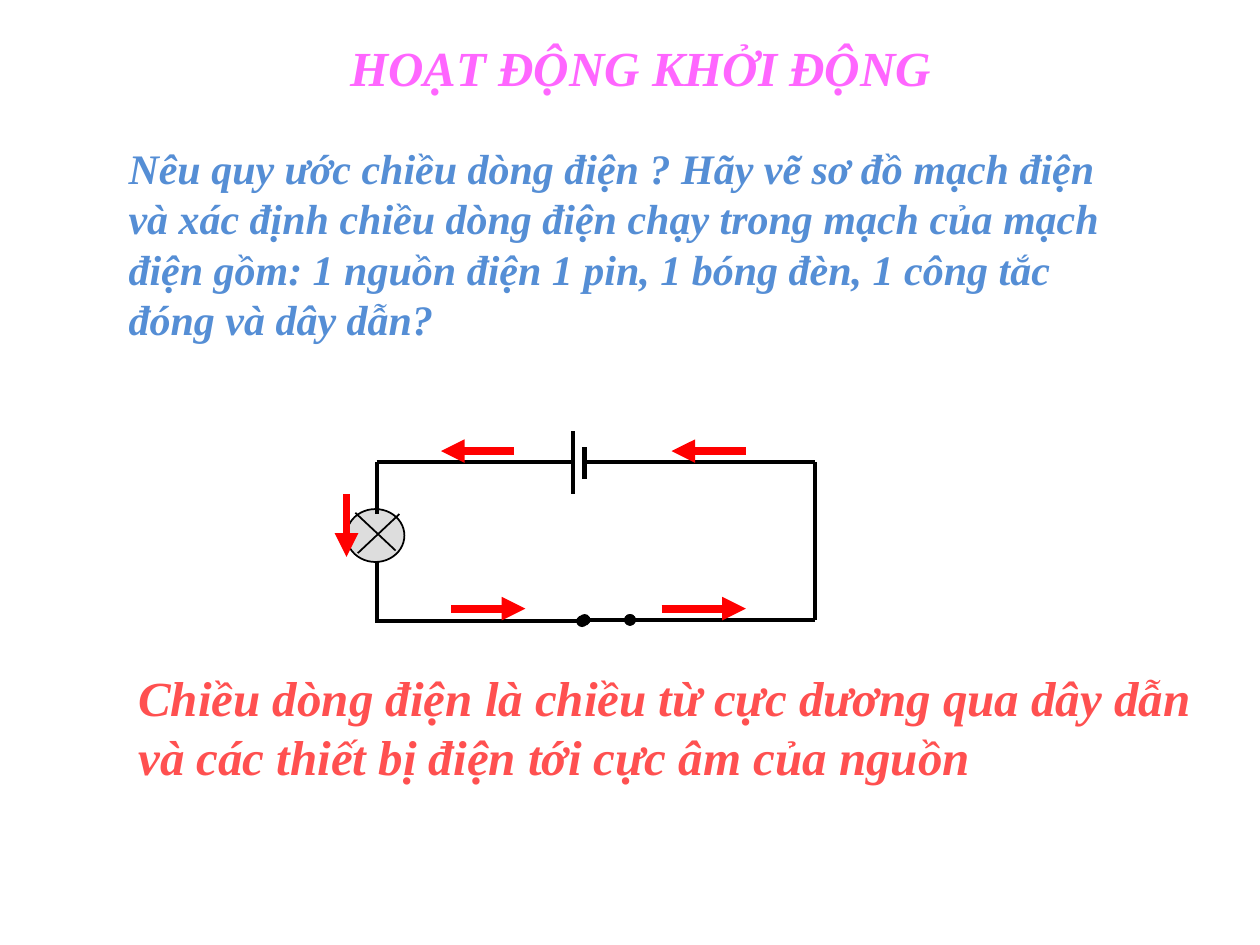
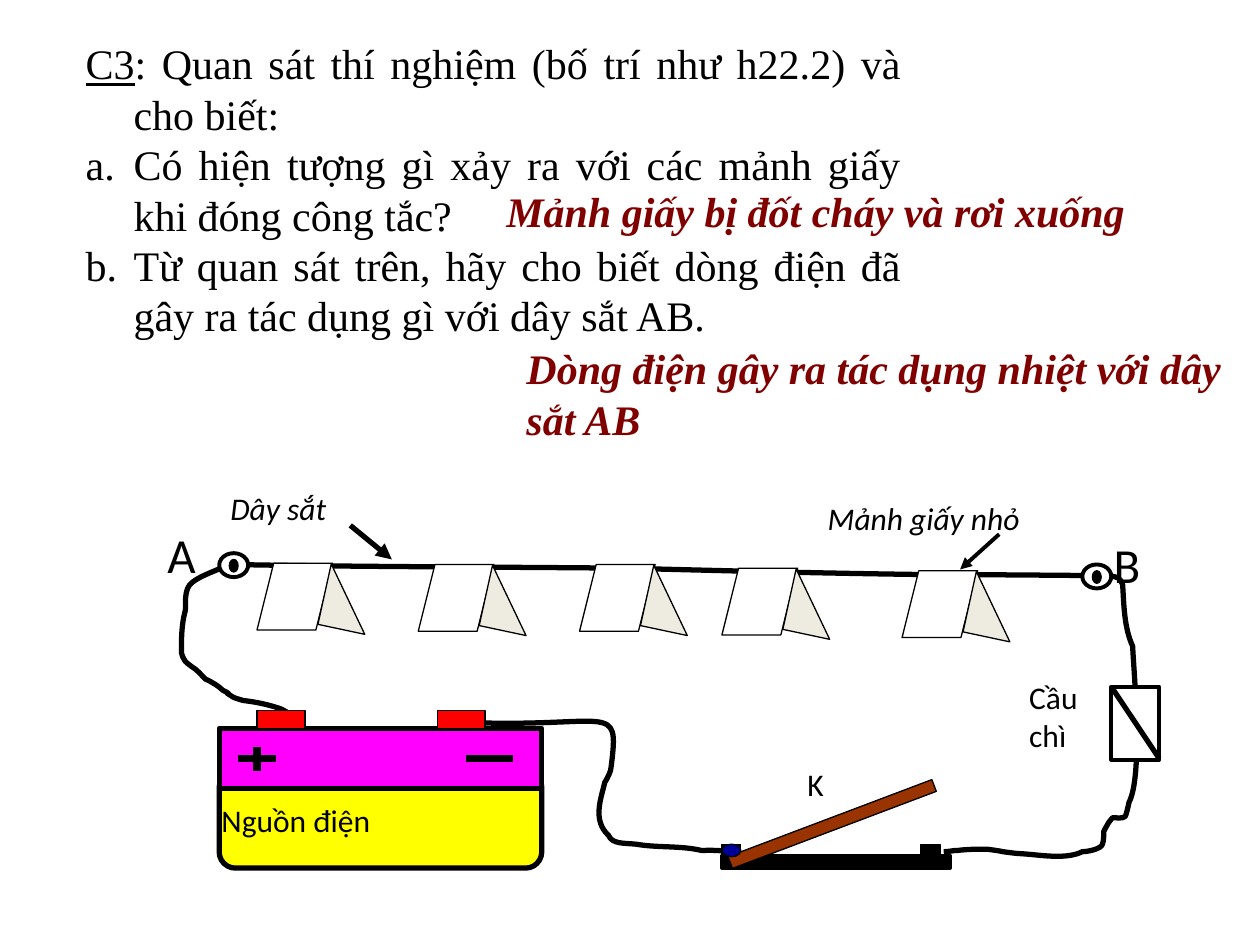
from itertools import chain
from lxml.etree import SubElement
from pptx import Presentation
from pptx.dml.color import RGBColor
from pptx.enum.shapes import MSO_CONNECTOR, MSO_SHAPE as SHAPE
from pptx.enum.text import MSO_ANCHOR, MSO_AUTO_SIZE, PP_ALIGN
from pptx.oxml.ns import qn
from pptx.util import Pt

PX = 9144
SERIF, SANS = "Times New Roman", "Calibri"
COLORS = {
    "black": "000000", "white": "FFFFFF", "red": "FF0000", "title": "FF66FF",
    "question": "558ED5", "conclusion": "FF5050", "answer": "800000",
    "bulb": "DDDDDD", "yellow": "FFFF00", "magenta": "FF00FF",
    "lever": "993300", "hinge": "000099", "fold": "EEECE1",
}
BATTERY_TO_SWITCH = [
    (362, 573), (485, 579, 492, 554, 485, 609), (485, 612, 482, 618, 480, 621),
    (477, 634, 470, 651, 483, 663), (486, 670, 495, 669, 505, 670),
    (522, 673, 540, 671, 557, 675), (582, 674, 581, 679, 581, 673),
]
BATTERY_TO_FUSE = [
    (233, 568), (228, 566, 225, 563, 221, 562), (212, 559, 202, 557, 193, 556),
    (190, 555, 185, 554, 183, 552), (175, 547, 187, 553, 177, 548),
    (174, 545, 168, 541, 163, 539), (159, 535, 157, 532, 152, 529),
    (150, 527, 147, 526, 146, 523), (145, 522, 144, 518, 144, 518),
    (144, 507, 144, 496, 147, 485), (148, 482, 145, 467, 153, 462),
    (158, 458, 166, 455, 173, 452), (175, 451, 181, 448, 181, 448),
    (286, 450, 391, 450, 496, 451), (574, 453, 652, 455, 730, 456),
    (780, 456, 880, 457, 880, 457), (888, 458, 889, 459, 891, 464),
    (892, 479, 892, 498, 899, 513), (899, 524, 908, 614, 896, 637),
    (896, 637, 894, 647, 893, 648), (891, 650, 886, 649, 883, 649),
    (879, 654, 881, 651, 877, 658), (877, 658, 876, 660, 876, 660),
    (876, 664, 876, 667, 875, 670), (874, 674, 863, 676, 859, 676),
    (847, 682, 828, 679, 816, 678), (804, 677, 811, 678, 796, 676),
    (792, 675, 783, 674, 783, 674), (776, 674, 768, 674, 760, 675),
    (756, 675, 753, 676, 749, 676),
]


def px(*lengths):
    """Turn px lengths into EMU."""
    return [length * PX for length in lengths]


def rgb(name):
    """Look up a colour by name."""
    return RGBColor.from_string(COLORS[name])


def set_outline(line, color, width):
    """Colour a line and set its width in points."""
    line.color.rgb = rgb(color)
    line.width = Pt(width)


def style_paragraph(paragraph, size, color, font=SERIF, bold=False, italic=False,
                    align=PP_ALIGN.LEFT, bullet="buNone", hanging=0):
    """Set the bullet, indent, alignment and font of a paragraph."""
    properties = paragraph._p.get_or_add_pPr()
    properties.set("marL", str(hanging * PX))
    properties.set("indent", str(-hanging * PX))
    mark = SubElement(properties, qn(f"a:{bullet}"))
    if bullet == "buAutoNum":
        mark.set("type", "alphaLcPeriod")
    paragraph.alignment = align
    paragraph.space_before = Pt(0)
    paragraph.font.name = font
    paragraph.font.size = Pt(size)
    paragraph.font.bold = bold
    paragraph.font.italic = italic
    paragraph.font.color.rgb = rgb(color)


def prepare_frame(shape, box):
    """Place a text shape and return its wrapping, top-anchored frame."""
    shape.left, shape.top, shape.width, shape.height = px(*box)
    frame = shape.text_frame
    frame.word_wrap = True
    frame.auto_size = MSO_AUTO_SIZE.SHAPE_TO_FIT_TEXT
    frame.vertical_anchor = MSO_ANCHOR.TOP
    return frame


def write_text(shape, box, text, size, color, **style):
    """Write one styled paragraph into a text shape."""
    paragraph = prepare_frame(shape, box).paragraphs[0]
    paragraph.text = text
    style_paragraph(paragraph, size, color, **style)


def add_text(shapes, box, text, size, color, **style):
    """Add a text box with one paragraph."""
    write_text(shapes.add_textbox(*px(*box)), box, text, size, color, **style)


def add_label(shapes, box, text, size=18, italic=False):
    """Add a diagram label."""
    add_text(shapes, box, text, size, "black", font=SANS, italic=italic)


def add_line(shapes, start, end, width=2.25, color="black", head=None, tail=None):
    """Add a straight line with optional end marks."""
    line = shapes.add_connector(MSO_CONNECTOR.STRAIGHT, *px(*start, *end))
    set_outline(line.line, color, width)
    properties = line._element.spPr
    outline = properties.find(qn("a:ln"))
    for tag, mark in (("a:headEnd", head), ("a:tailEnd", tail)):
        if mark:
            SubElement(outline, qn(tag)).set("type", mark)
    SubElement(properties, qn("a:effectLst"))


def add_shape(shapes, kind, box, fill, width=0.75, rotation=0, adjustment=None):
    """Add a filled preset shape with a black outline."""
    shape = shapes.add_shape(kind, *px(*box))
    shape.shadow.inherit = False
    shape.fill.solid()
    shape.fill.fore_color.rgb = rgb(fill)
    set_outline(shape.line, "black", width)
    shape.rotation = rotation
    if adjustment is not None:
        shape.adjustments[0] = adjustment


def bend_segments(shape):
    """Merge each three straight segments of a freeform into one Bezier curve."""
    outline = next(shape._element.iter(qn("a:path")))
    segments = outline.findall(qn("a:lnTo"))
    for first in range(0, len(segments), 3):
        curve = SubElement(outline, qn("a:cubicBezTo"))
        for segment in segments[first:first + 3]:
            curve.append(segment[0])
            outline.remove(segment)


def add_wire(shapes, curve):
    """Add a curved wire."""
    numbers = list(chain.from_iterable(curve))
    points = list(zip(numbers[::2], numbers[1::2]))
    builder = shapes.build_freeform(*points[0], scale=PX)
    builder.add_line_segments(points[1:], close=False)
    wire = builder.convert_to_shape()
    bend_segments(wire)
    wire.shadow.inherit = False
    wire.fill.background()
    set_outline(wire.line, "black", 3)


def add_paper(shapes, left, top):
    """Add a folded piece of paper hanging on the wire."""
    add_shape(shapes, SHAPE.PARALLELOGRAM, (left, top, 60, 53), "white", adjustment=0.25)
    add_shape(shapes, SHAPE.ISOSCELES_TRIANGLE, (left + 53, top + 4, 38, 49), "fold",
              rotation=12, adjustment=0.01)


def add_terminal(shapes, left, top):
    """Add a ring terminal with a dark core."""
    add_shape(shapes, SHAPE.OVAL, (left, top, 23, 19), "white", 2.25)
    add_shape(shapes, SHAPE.OVAL, (left + 8, top + 5, 7, 10), "black")


def draw_circuit(shapes):
    """Draw the circuit of one cell, one bulb and a closed switch."""
    add_line(shapes, (647, 492), (500, 492), tail="oval")
    for start, end in (((299, 492), (299, 442)), ((299, 367), (455, 367)),
                       ((455, 392), (455, 342)), ((464, 367), (647, 367)),
                       ((647, 367), (647, 492))):
        add_line(shapes, start, end)
    add_line(shapes, (500, 492), (464, 492), head="oval", tail="oval")
    add_shape(shapes, SHAPE.OVAL, (275, 404, 46, 42), "bulb", 1)
    add_line(shapes, (282, 407), (314, 437), 1)
    add_line(shapes, (299, 408), (299, 367))
    add_line(shapes, (284, 439), (317, 408), 1)
    add_line(shapes, (462, 493), (298, 493), head="oval")
    add_line(shapes, (464, 380), (464, 355), 3)


def draw_battery(shapes):
    """Draw the battery with its poles and signs."""
    add_shape(shapes, SHAPE.ROUNDED_RECTANGLE, (174, 612, 256, 77), "yellow", 3,
              adjustment=0.167)
    add_label(shapes, (166, 631, 286, 40), "Nguồn điện")
    add_shape(shapes, SHAPE.RECTANGLE, (174, 578, 256, 48), "magenta", 3)
    for start, end in (((189, 602), (219, 602)), ((204, 593), (204, 612)),
                       ((370, 602), (407, 602))):
        add_line(shapes, start, end, 4.5)
    for left in (204, 347):
        add_shape(shapes, SHAPE.RECTANGLE, (left, 564, 38, 14), "red")


def draw_switch(shapes):
    """Draw the open switch K."""
    add_shape(shapes, SHAPE.RECTANGLE, (573, 679, 181, 10), "black", 2.25)
    for left in (573, 731):
        add_shape(shapes, SHAPE.RECTANGLE, (left, 670, 15, 10), "black")
    add_shape(shapes, SHAPE.RECTANGLE, (574, 649, 173, 10), "lever", rotation=339.3)
    add_shape(shapes, SHAPE.OVAL, (573, 670, 15, 10), "hinge")
    add_label(shapes, (631, 602, 60, 40), "K")


def draw_experiment(shapes):
    """Draw the iron wire experiment."""
    add_wire(shapes, BATTERY_TO_SWITCH)
    add_wire(shapes, BATTERY_TO_FUSE)
    draw_battery(shapes)
    draw_switch(shapes)
    add_shape(shapes, SHAPE.RECTANGLE, (882, 545, 38, 58), "white", 2.25)
    add_line(shapes, (882, 545), (920, 602), 3)
    for left, top in ((204, 447), (332, 448), (460, 448), (573, 451), (716, 453)):
        add_paper(shapes, left, top)
    add_terminal(shapes, 859, 448)
    add_terminal(shapes, 174, 439)
    add_label(shapes, (807, 533, 90, 71), "Cầu chì")
    add_label(shapes, (647, 391, 279, 40), "Mảnh giấy nhỏ", italic=True)
    add_line(shapes, (793, 424), (762, 452), tail="triangle")
    add_label(shapes, (173, 383, 168, 40), "Dây sắt", italic=True)
    add_line(shapes, (278, 417), (311, 444), 3, tail="triangle")
    add_label(shapes, (123, 411, 68, 45), "A", 28)
    add_label(shapes, (874, 419, 68, 45), "B", 28)


def build_warm_up(slide):
    """Build the warm-up slide."""
    emphasis = {"bold": True, "italic": True}
    title, body = slide.placeholders
    write_text(title, (117, 25, 783, 57), "HOẠT ĐỘNG KHỞI ĐỘNG", 28, "title",
               align=PP_ALIGN.CENTER, **emphasis)
    write_text(body, (92, 108, 808, 172),
               "Nêu quy ước chiều dòng điện ? Hãy vẽ sơ đồ mạch điện và xác định chiều "
               "dòng điện chạy trong mạch của mạch điện gồm: 1 nguồn điện 1 pin, 1 bóng "
               "đèn, 1 công tắc đóng và dây dẫn?", 24, "question", **emphasis)
    draw_circuit(slide.shapes.add_group_shape().shapes)
    add_text(slide.shapes, (100, 525, 867, 104),
             "Chiều dòng điện là chiều từ cực dương qua dây dẫn và các thiết bị điện "
             "tới cực âm của nguồn", 28, "conclusion", **emphasis)
    for start, end in (((592, 358), (533, 358)), ((408, 358), (350, 358)),
                       ((275, 392), (275, 442)), ((358, 483), (417, 483)),
                       ((525, 483), (592, 483))):
        add_line(slide.shapes, start, end, 4.5, "red", tail="triangle")


def build_experiment(slide):
    """Build the slide with question C3 and its answers."""
    title, body = slide.placeholders
    title.element.getparent().remove(title.element)
    draw_experiment(slide.shapes.add_group_shape().shapes)
    slide.shapes._spTree.append(body.element)
    frame = prepare_frame(body, (58, 25, 667, 252))
    questions = (
        ("buNone", ("C3", ": Quan sát thí nghiệm (bố trí như h22.2) và cho biết:")),
        ("buAutoNum", ("Có hiện tượng gì xảy ra với các mảnh giấy khi đóng công tắc?",)),
        ("buAutoNum", ("Từ quan sát trên, hãy cho biết dòng điện đã gây ra tác dụng gì "
                       "với dây sắt AB.",)),
    )
    for index, (bullet, texts) in enumerate(questions):
        paragraph = frame.add_paragraph() if index else frame.paragraphs[0]
        style_paragraph(paragraph, 24, "black", align=PP_ALIGN.JUSTIFY,
                        bullet=bullet, hanging=38)
        for text in texts:
            paragraph.add_run().text = text
    frame.paragraphs[0].runs[0].font.underline = True
    for box, answer in (
            ((392, 142, 550, 50), "Mảnh giấy bị đốt cháy và rơi xuống"),
            ((408, 267, 617, 91), "Dòng điện gây ra tác dụng nhiệt với dây sắt AB")):
        add_text(slide.shapes, box, answer, 24, "answer", bold=True, italic=True)


def main():
    """Build and save the presentation."""
    presentation = Presentation()
    presentation.slide_width, presentation.slide_height = px(1000, 750)
    layout = presentation.slide_layouts[1]
    for build in (build_warm_up, build_experiment):
        build(presentation.slides.add_slide(layout))
    presentation.save("out.pptx")


if __name__ == "__main__":
    main()
